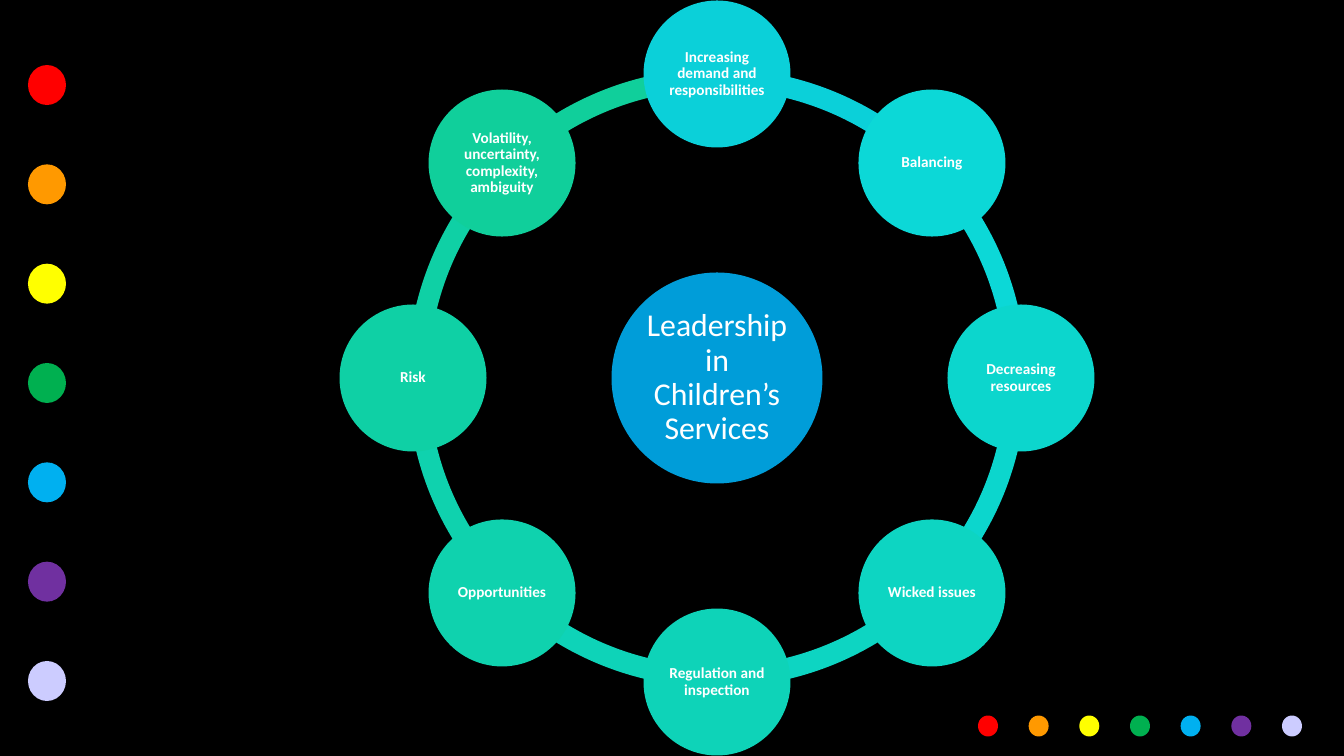
"""Build a slide showing a ring of leadership challenges around a central theme."""
import math

from pptx import Presentation, util as u
from pptx.dml.color import RGBColor
from pptx.enum import shapes, text

THEME = "Leadership in Children’s Services"
CHALLENGES = [
    ("Increasing demand and responsibilities", "sky"),
    ("Balancing", "cyan"),
    ("Decreasing resources", "aqua"),
    ("Wicked issues", "turquoise"),
    ("Regulation and inspection", "teal"),
    ("Opportunities", "sea"),
    ("Risk", "jade"),
    ("Volatility, uncertainty, complexity, ambiguity", "emerald"),
]
RAINBOW = ["red", "orange", "yellow", "green", "blue", "purple", "lavender"]
COLOURS = {
    "background": "000000", "text": "FFFFFF", "theme": "009DD9",
    "sky": "0BD0D9", "cyan": "0CD8D7", "aqua": "0CD6CD", "turquoise": "0DD5C2",
    "teal": "0ED3B8", "sea": "0FD2AE", "jade": "0FD0A5", "emerald": "10CF9B",
    "red": "FF0000", "orange": "FF9900", "yellow": "FFFF00", "green": "00B050",
    "blue": "00B0F0", "purple": "7030A0", "lavender": "CCCCFF",
}
FONT = "Calibri"
SLIDE_WIDTH, SLIDE_HEIGHT = 1344, 756
CENTRE_X, CENTRE_Y = 717, 378
RING_SIZE, ORBIT_RADIUS, NODE_SIZE, THEME_SIZE = 619, 304, 147, 211
RING_THICKNESS = 0.034
SIDE_X, SIDE_FIRST, SIDE_LAST, SIDE_WIDTH, SIDE_HEIGHT = 47, 85, 681, 38, 40
FOOT_Y, FOOT_FIRST, FOOT_LAST, FOOT_WIDTH, FOOT_HEIGHT = 726, 988, 1292, 20, 21


def px(value):
    return u.Emu(round(value * 10000))


def rgb(name):
    return RGBColor.from_string(COLOURS[name])


def add_centred(slide, kind, x, y, width, height, colour):
    shape = slide.shapes.add_shape(
        kind, px(x - width / 2), px(y - height / 2), px(width), px(height))
    shape.shadow.inherit = False
    shape.fill.solid()
    shape.fill.fore_color.rgb = rgb(colour)
    shape.line.fill.background()
    return shape


def add_circle(slide, x, y, width, height, colour):
    return add_centred(slide, shapes.MSO_SHAPE.OVAL, x, y, width, height, colour)


def write_label(shape, label, size, bold, inset):
    frame = shape.text_frame
    frame.text = label
    frame.word_wrap = True
    frame.vertical_anchor = text.MSO_ANCHOR.MIDDLE
    frame.margin_left = frame.margin_right = px(inset)
    frame.margin_top = frame.margin_bottom = px(inset)
    paragraph = frame.paragraphs[0]
    paragraph.alignment = text.PP_ALIGN.CENTER
    paragraph.line_spacing = 0.9
    font = paragraph.runs[0].font
    font.name, font.size, font.bold = FONT, u.Pt(size), bold
    font.color.rgb = rgb("text")


def add_rainbow_dots(slide):
    side_step = (SIDE_LAST - SIDE_FIRST) / (len(RAINBOW) - 1)
    foot_step = (FOOT_LAST - FOOT_FIRST) / (len(RAINBOW) - 1)
    for index, colour in enumerate(RAINBOW):
        add_circle(slide, SIDE_X, SIDE_FIRST + index * side_step,
                   SIDE_WIDTH, SIDE_HEIGHT, colour)
        add_circle(slide, FOOT_FIRST + index * foot_step, FOOT_Y,
                   FOOT_WIDTH, FOOT_HEIGHT, colour)


def add_ring(slide):
    step = 360 / len(CHALLENGES)
    angles = [(270 + index * step) % 360 for index in range(len(CHALLENGES))]
    nodes = list(zip(CHALLENGES, angles))
    for (_, colour), angle in reversed(nodes):
        arc = add_centred(slide, shapes.MSO_SHAPE.BLOCK_ARC, CENTRE_X, CENTRE_Y,
                          RING_SIZE, RING_SIZE, colour)
        arc.adjustments[0] = angle * 0.6
        arc.adjustments[1] = (angle + step) % 360 * 0.6
        arc.adjustments[2] = RING_THICKNESS

    theme = add_circle(slide, CENTRE_X, CENTRE_Y, THEME_SIZE, THEME_SIZE, "theme")
    write_label(theme, THEME, 25, False, 3)
    for (label, colour), angle in nodes:
        x = CENTRE_X + ORBIT_RADIUS * math.cos(math.radians(angle))
        y = CENTRE_Y + ORBIT_RADIUS * math.sin(math.radians(angle))
        node = add_circle(slide, x, y, NODE_SIZE, NODE_SIZE, colour)
        write_label(node, label, 12, True, 2)


def main():
    presentation = Presentation()
    presentation.slide_width, presentation.slide_height = px(SLIDE_WIDTH), px(SLIDE_HEIGHT)
    slide = presentation.slides.add_slide(presentation.slide_layouts[6])
    slide.background.fill.solid()
    slide.background.fill.fore_color.rgb = rgb("background")
    add_rainbow_dots(slide)
    add_ring(slide)
    presentation.save("out.pptx")


if __name__ == "__main__":
    main()
